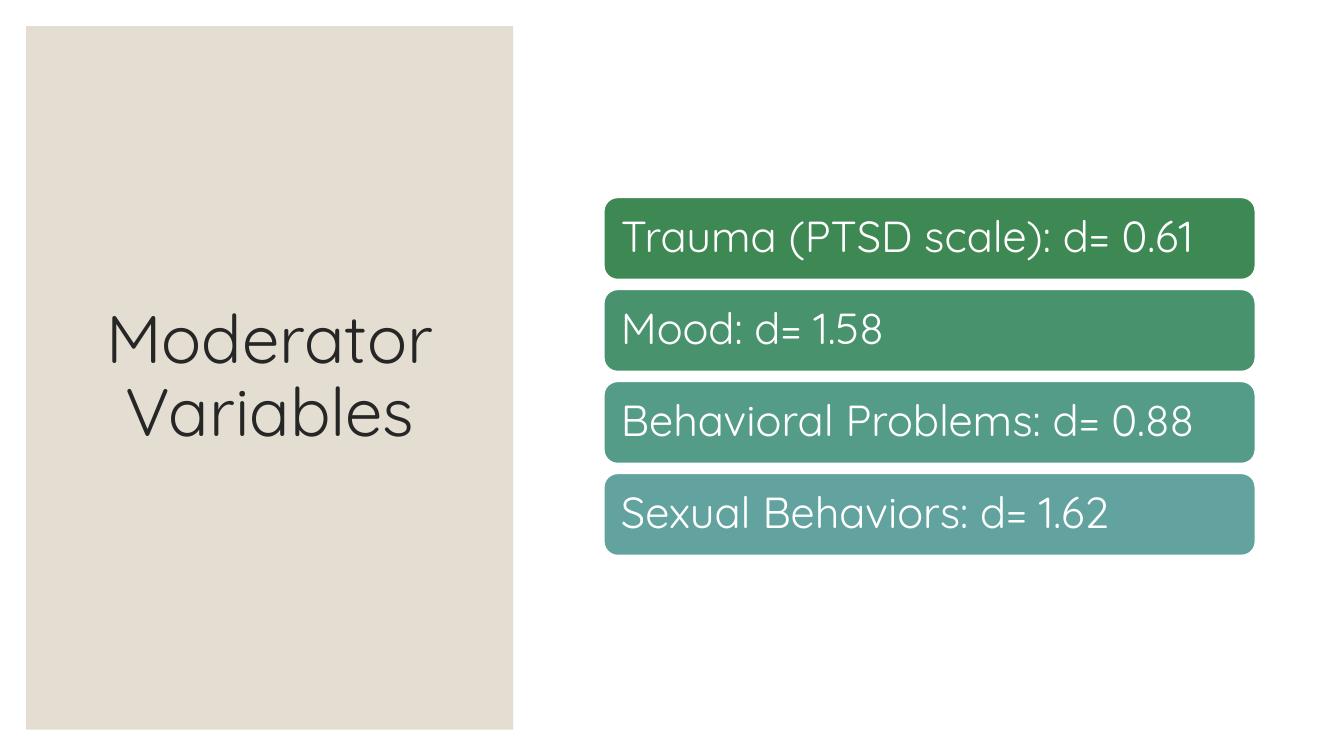
from dataclasses import dataclass
from pptx import Presentation
from pptx.dml.color import RGBColor as RGB
from pptx.enum.shapes import MSO_SHAPE as Preset
from pptx.enum.text import MSO_ANCHOR as Anchor, MSO_AUTO_SIZE as AutoSize, PP_ALIGN as Align
from pptx.util import Inches, Pt


@dataclass(frozen=True)
class Theme:
    font: str = "Quicksand"
    paper: str = "FFFFFF"
    panel: str = "E3DED1"
    ink: str = "262626"
    bars: tuple = ("3E8853", "49926E", "549C88", "62A39F")
    title_size: int = 48
    bar_size: int = 31


@dataclass(frozen=True)
class Box:
    left: float
    top: float
    width: float
    height: float

    def lengths(self):
        return [Inches(v) for v in (self.left, self.top, self.width, self.height)]

    def inset(self, dx, dy):
        return Box(self.left + dx, self.top + dy, self.width - 2 * dx, self.height - 2 * dy)

    def row(self, index, count, gap):
        height = (self.height - gap * (count - 1)) / count
        return Box(self.left, self.top + index * (height + gap), self.width, height)


THEME = Theme()
WIDTH, HEIGHT = 13.33, 7.5
MARGIN = 0.26
MODERATORS = [
    "Trauma (PTSD scale): d= 0.61",
    "Mood: d= 1.58",
    "Behavioral Problems: d= 0.88",
    "Sexual Behaviors: d= 1.62",
]


def apply(target, formats):
    for name, value in formats.items():
        setattr(target, name, value)


def add_block(slide, preset, box, color):
    block = slide.shapes.add_shape(preset, *box.lengths())
    block.shadow.inherit = False
    block.fill.solid()
    block.fill.fore_color.rgb = RGB.from_string(color)
    block.line.fill.background()
    return block


def write(shape, wording, size, color, frame_formats, paragraph_formats):
    frame = shape.text_frame
    frame.text = wording
    apply(frame, {"word_wrap": True, "auto_size": AutoSize.NONE,
                  "vertical_anchor": Anchor.MIDDLE, **frame_formats})
    paragraph = frame.paragraphs[0]
    apply(paragraph, {"line_spacing": 0.9, **paragraph_formats})
    font = paragraph.runs[0].font
    apply(font, {"name": THEME.font, "size": Pt(size)})
    font.color.rgb = RGB.from_string(color)


def build_title_panel(slide, box):
    panel = add_block(slide, Preset.RECTANGLE, box, THEME.panel)
    title = slide.shapes.title
    # The panel lies behind the title
    title.element.addprevious(panel.element)
    area = box.inset(0.36, 0.36)
    apply(title, dict(zip(("left", "top", "width", "height"), area.lengths())))
    write(title, "Moderator Variables", THEME.title_size, THEME.ink,
          {}, {"alignment": Align.CENTER})


def build_moderator_bars(slide, box):
    sides = ("margin_left", "margin_top", "margin_right", "margin_bottom")
    margins = dict.fromkeys(sides, Inches(0.13))
    for index, (moderator, color) in enumerate(zip(MODERATORS, THEME.bars)):
        bar = add_block(slide, Preset.ROUNDED_RECTANGLE,
                        box.row(index, len(MODERATORS), gap=0.1), color)
        bar.line.color.rgb = RGB.from_string(THEME.paper)
        bar.line.width = Pt(1)
        write(bar, moderator, THEME.bar_size, THEME.paper, margins,
              {"alignment": Align.LEFT, "space_after": Pt(0.35 * THEME.bar_size)})


def main():
    deck = Presentation()
    apply(deck, {"slide_width": Inches(WIDTH), "slide_height": Inches(HEIGHT)})
    slide = deck.slides.add_slide(deck.slide_layouts.get_by_name("Title Only"))
    # Page
    slide.background.fill.solid()
    slide.background.fill.fore_color.rgb = RGB.from_string(THEME.paper)
    # Left: title panel; right: one bar per moderator
    build_title_panel(slide, Box(MARGIN, MARGIN, 4.83, HEIGHT - 2 * MARGIN))
    build_moderator_bars(slide, Box(5.99, 1.96, 6.46, 3.55))
    deck.save("out.pptx")


if __name__ == "__main__":
    main()
